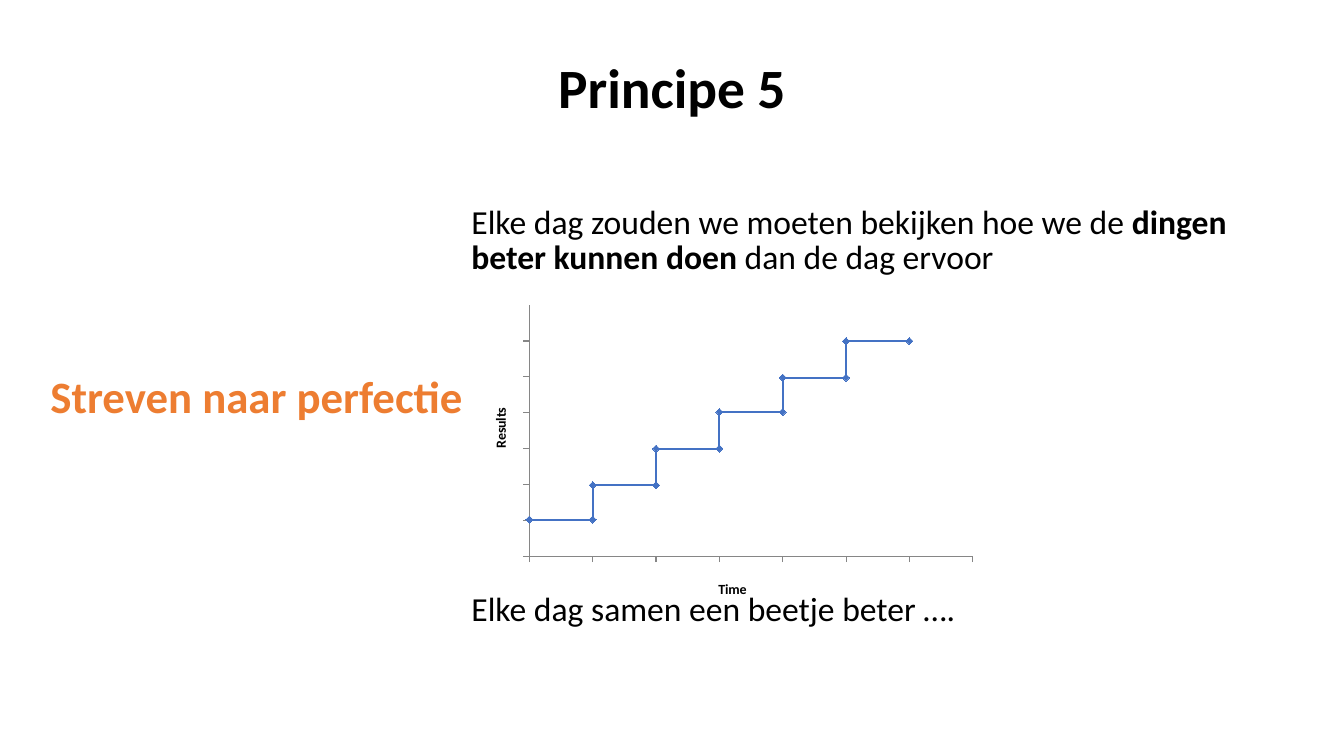
"""Build the slide on the fifth principle: striving for perfection, with a staircase chart."""
from dataclasses import dataclass

from lxml import etree
from pptx import Presentation
from pptx import util as u
from pptx.chart import axis as ax
from pptx.chart import data
from pptx.dml import color
from pptx.enum import chart as ch
from pptx.enum import text as tx
from pptx.oxml import ns

FONT = "Calibri"
BLACK, ORANGE, BLUE, GREY = "000000", "ED7D31", "4472C4", "868686"
LEVELS = (17, 33, 50, 67, 83, 100)
STEP_TIME = 20


@dataclass
class Run:
    text: str
    bold: bool = False


@dataclass
class Paragraph:
    runs: list[Run]
    size: float
    color: str = BLACK
    align: tx.PP_ALIGN = tx.PP_ALIGN.LEFT
    line_spacing: float | u.Length = 1.0
    space_before: float = 0


@dataclass
class TextBlock:
    left: float
    top: float
    width: float
    height: float
    paragraphs: list[Paragraph]
    anchor: tx.MSO_ANCHOR = tx.MSO_ANCHOR.TOP


@dataclass
class AxisStyle:
    title: str
    maximum: float
    unit: float
    title_spot: dict[str, float]
    rotation: int = 0


TEXT_BLOCKS = [
    TextBlock(1.02, 9.17, 11.28, 1.63, [
        Paragraph([Run("Streven naar perfectie", True)], 32, ORANGE)]),
    TextBlock(11.63, 5.08, 19.71, 11.43, [
        Paragraph([Run("Elke dag zouden we moeten bekijken hoe we de "),
                   Run("dingen beter kunnen doen ", True),
                   Run("dan de dag ervoor")], 24, line_spacing=u.Pt(25)),
        Paragraph([Run("Elke dag samen een beetje beter ….")], 24,
                  line_spacing=u.Pt(25), space_before=226)]),
    TextBlock(0, 1.47, 33.87, 1.73, [
        Paragraph([Run("Principe 5", True)], 39.6, align=tx.PP_ALIGN.CENTER,
                  line_spacing=0.8)], tx.MSO_ANCHOR.MIDDLE),
]
TIME = AxisStyle("Time", 140, 20, {"x": 0.47, "y": 0.92})
RESULTS = AxisStyle("Results", 116.67, 16.67, {"x": 0.02, "y": 0.35}, -5400000)
PLOT_SPOT = {"x": 0.1, "y": 0.02, "w": 0.88, "h": 0.83}


def rgb(value: str) -> color.RGBColor:
    return color.RGBColor.from_string(value)


def draw_text(slide, block: TextBlock) -> None:
    box = slide.shapes.add_textbox(u.Cm(block.left), u.Cm(block.top),
                                   u.Cm(block.width), u.Cm(block.height))
    frame = box.text_frame
    frame.word_wrap = True
    frame.vertical_anchor = block.anchor
    for index, item in enumerate(block.paragraphs):
        paragraph = frame.add_paragraph() if index else frame.paragraphs[0]
        paragraph.alignment = item.align
        paragraph.line_spacing = item.line_spacing
        if item.space_before:
            paragraph.space_before = u.Pt(item.space_before)
        paragraph.font.name = FONT
        paragraph.font.size = u.Pt(item.size)
        paragraph.font.color.rgb = rgb(item.color)
        for part in item.runs:
            run = paragraph.add_run()
            run.text = part.text
            run.font.bold = part.bold


def place(element, spot: dict[str, float], index: int, inner: bool = False) -> None:
    for old in element.findall(ns.qn("c:layout")):
        element.remove(old)
    layout = etree.Element(ns.qn("c:layout"))
    manual = etree.SubElement(layout, ns.qn("c:manualLayout"))
    settings = {"layoutTarget": "inner"} if inner else {}
    settings |= {"xMode": "edge", "yMode": "edge"} | spot
    for tag, value in settings.items():
        etree.SubElement(manual, ns.qn(f"c:{tag}")).set("val", str(value))
    element.insert(index, layout)


def style_axis(axis: ax._BaseAxis, style: AxisStyle) -> None:
    axis.minimum_scale = 0
    axis.maximum_scale = style.maximum
    axis.major_unit = style.unit
    axis.has_major_gridlines = False
    axis.major_tick_mark = ch.XL_TICK_MARK.OUTSIDE
    axis.minor_tick_mark = ch.XL_TICK_MARK.NONE
    axis.tick_label_position = ch.XL_TICK_LABEL_POSITION.NONE
    axis.format.line.color.rgb = rgb(GREY)
    axis.format.line.width = u.Pt(0.75)
    frame = axis.axis_title.text_frame
    frame.text = style.title
    frame._txBody.bodyPr.set("rot", str(style.rotation))
    font = frame.paragraphs[0].font
    font.name, font.size, font.bold = FONT, u.Pt(10), True
    font.color.rgb = rgb(BLACK)
    place(axis.axis_title._element, style.title_spot, 1)


def draw_staircase(slide) -> None:
    chart_data = data.XyChartData()
    stairs = chart_data.add_series("Series 1")
    for step, level in enumerate(LEVELS):
        stairs.add_data_point(step * STEP_TIME, level)
        stairs.add_data_point((step + 1) * STEP_TIME, level)
    chart = slide.shapes.add_chart(ch.XL_CHART_TYPE.XY_SCATTER_LINES, u.Cm(12.07), u.Cm(7.54),
                                   u.Cm(12.7), u.Cm(7.62), chart_data).chart
    chart.has_legend = False
    chart.has_title = False
    chart.font.name = FONT
    chart.font.size = u.Pt(10)
    chart.font.color.rgb = rgb(BLACK)
    style_axis(chart.category_axis, TIME)
    style_axis(chart.value_axis, RESULTS)
    place(chart._chartSpace.chart.plotArea, PLOT_SPOT, 0, inner=True)
    chart.plots[0].vary_by_categories = False
    line = chart.plots[0].series[0]
    line.smooth = False
    line.format.line.color.rgb = rgb(BLUE)
    line.format.line.width = u.Pt(1.5)
    line.marker.style = ch.XL_MARKER_STYLE.DIAMOND
    line.marker.size = 5
    line.marker.format.fill.solid()
    line.marker.format.fill.fore_color.rgb = rgb(BLUE)
    line.marker.format.line.color.rgb = rgb(BLUE)


def main() -> None:
    deck = Presentation()
    deck.slide_width, deck.slide_height = u.Cm(33.87), u.Cm(19.05)
    slide = deck.slides.add_slide(deck.slide_layouts[6])
    draw_staircase(slide)
    for block in TEXT_BLOCKS:
        draw_text(slide, block)
    deck.save("out.pptx")


if __name__ == "__main__":
    main()
